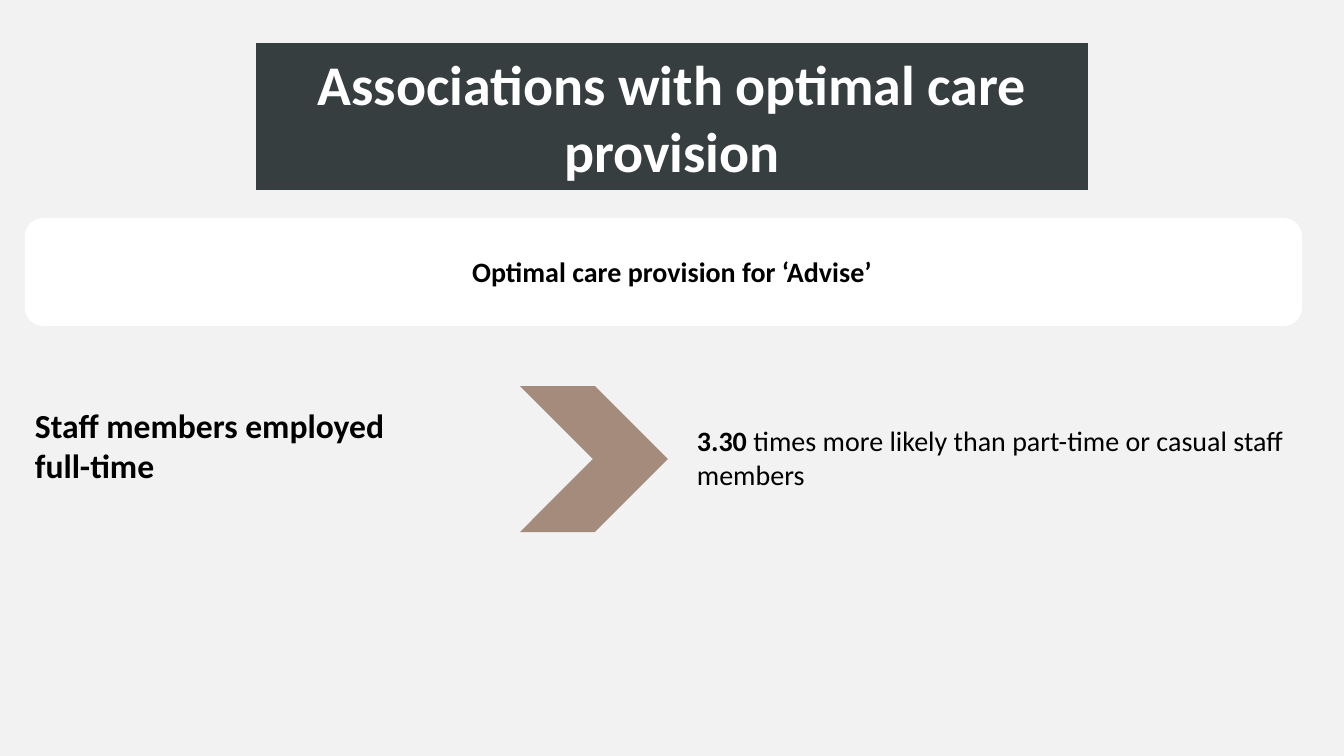
"""Builds the slide on associations with optimal care provision."""
from pptx import Presentation
from pptx.dml.color import RGBColor
from pptx.enum.shapes import MSO_SHAPE
from pptx.enum.text import MSO_ANCHOR, MSO_AUTO_SIZE, PP_ALIGN
from pptx.util import Emu, Pt

COLOURS = {
    "background": "F2F2F2",
    "banner": "373E40",
    "panel": "FFFFFF",
    "chevron": "A58B7C",
    "title": "FFFFFF",
    "text": "000000",
}


def px(*lengths):
    return [Emu(round(length * 914400 / 100.8)) for length in lengths]


def paint(fill, name):
    fill.solid()
    fill.fore_color.rgb = RGBColor.from_string(COLOURS[name])


deck = Presentation()
deck.slide_width, deck.slide_height = px(1344, 756)
page = deck.slides.add_slide(deck.slide_layouts[5])
paint(page.background.fill, "background")

for preset, place, colour in [
    (MSO_SHAPE.ROUNDED_RECTANGLE, (25, 218, 1277, 108), "panel"),
    (MSO_SHAPE.CHEVRON, (520, 386, 148, 146), "chevron"),
]:
    shape = page.shapes.add_shape(preset, *px(*place))
    shape.shadow.inherit = False
    paint(shape.fill, colour)
    shape.line.fill.background()

title = page.shapes.title
title.left, title.top, title.width, title.height = px(256, 43, 832, 147)
paint(title.fill, "banner")
title.text_frame.text = "Associations with optimal care provision"

heading = page.shapes.add_textbox(*px(115, 215, 1114, 112))
heading.text_frame.text = "Optimal care provision for ‘Advise’"

group = page.shapes.add_textbox(*px(25, 400, 490, 132))
group.text_frame.text = "Staff members employed\nfull-time"

finding = page.shapes.add_textbox(*px(687, 419, 645, 78))
finding.text_frame.text = "3.30 "
remark = finding.text_frame.paragraphs[0].add_run()
remark.text = "times more likely than part-time or casual staff members"

for box, size, colour, align, anchor in [
    (title, 40, "title", PP_ALIGN.CENTER, MSO_ANCHOR.MIDDLE),
    (heading, 20, "text", PP_ALIGN.CENTER, MSO_ANCHOR.MIDDLE),
    (group, 24, "text", PP_ALIGN.LEFT, MSO_ANCHOR.TOP),
    (finding, 20, "text", PP_ALIGN.LEFT, MSO_ANCHOR.TOP),
]:
    frame = box.text_frame
    frame.word_wrap = True
    frame.auto_size = MSO_AUTO_SIZE.NONE
    frame.vertical_anchor = anchor
    for para in frame.paragraphs:
        para.alignment = align
        for span in para.runs:
            span.font.name = "Calibri"
            span.font.size = Pt(size)
            span.font.bold = True
            span.font.color.rgb = RGBColor.from_string(COLOURS[colour])
remark.font.bold = False

deck.save("out.pptx")
